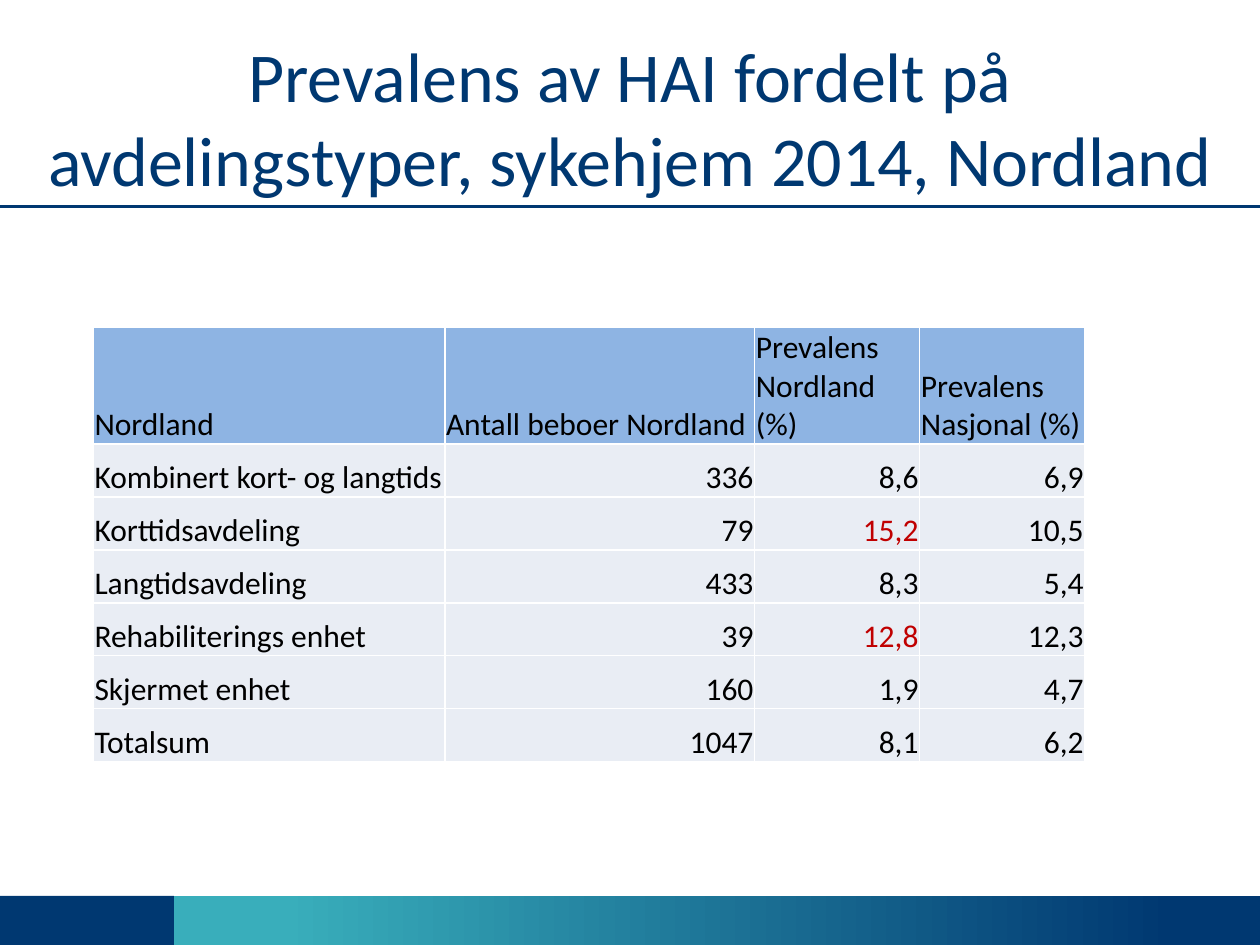
from lxml import etree
from pptx import Presentation
from pptx.dml.color import RGBColor
from pptx.enum import shapes, text
from pptx.oxml import ns
from pptx.util import Inches, Pt

NAVY, TEAL, WHITE, BLACK, RED = "003871", "39AEBB", "FFFFFF", "000000", "C00000"
HEADER_BLUE, ROW_GREY = "8EB4E3", "E9EDF4"


def rgb(hex_color):
    return RGBColor.from_string(hex_color)


def write_text(frame, content, size=18, color=BLACK, align=text.PP_ALIGN.LEFT):
    paragraph = frame.paragraphs[0]
    paragraph.text = content
    paragraph.alignment = align
    paragraph.font.name = "Calibri"
    paragraph.font.size = Pt(size)
    paragraph.font.color.rgb = rgb(color)


presentation = Presentation()
presentation.slide_width = Inches(10)
presentation.slide_height = Inches(7.5)
slide = presentation.slides.add_slide(presentation.slide_layouts[5])

# Footer band: a gradient strip and a solid corner
for left, width in [(1.38, 8.62), (0, 1.38)]:
    band = slide.shapes.add_shape(
        shapes.MSO_SHAPE.RECTANGLE, Inches(left), Inches(7.11), Inches(width), Inches(0.39))
    band.shadow.inherit = False
    band.line.fill.background()
    if left:
        band.fill.gradient()
        band.fill.gradient_angle = 0
        for stop, position, color in zip(band.fill.gradient_stops, (0.1, 0.92), (TEAL, NAVY)):
            stop.position = position
            stop.color.rgb = rgb(color)
    else:
        band.fill.solid()
        band.fill.fore_color.rgb = rgb(NAVY)

# Rule under the title
rule = slide.shapes.add_connector(
    shapes.MSO_CONNECTOR.STRAIGHT, 0, Inches(1.64), Inches(10), Inches(1.64))
rule.line.color.rgb = rgb(NAVY)
rule.line.width = Pt(2)
etree.SubElement(rule._element.spPr, ns.qn("a:effectLst"))

# Title
title = slide.shapes.title
title.left, title.top = Inches(0.26), Inches(0.3)
title.width, title.height = Inches(9.48), Inches(1.25)
title.text_frame.auto_size = text.MSO_AUTO_SIZE.NONE
title.text_frame.vertical_anchor = text.MSO_ANCHOR.MIDDLE
write_text(title.text_frame, "Prevalens av HAI fordelt på avdelingstyper, sykehjem 2014, Nordland",
           size=40, color=NAVY, align=text.PP_ALIGN.CENTER)

# Prevalence table
rows = [
    ("Nordland", "Antall beboer Nordland", "Prevalens Nordland (%)", "Prevalens Nasjonal (%)"),
    ("Kombinert kort- og langtids", "336", "8,6", "6,9"),
    ("Korttidsavdeling", "79", "15,2", "10,5"),
    ("Langtidsavdeling", "433", "8,3", "5,4"),
    ("Rehabiliterings enhet", "39", "12,8", "12,3"),
    ("Skjermet enhet", "160", "1,9", "4,7"),
    ("Totalsum", "1047", "8,1", "6,2"),
]
highlighted = {"15,2", "12,8"}
column_widths = [2.79, 2.46, 1.31, 1.31]
row_height = 0.42

table = slide.shapes.add_table(
    len(rows), len(column_widths), Inches(0.74), Inches(2.6),
    Inches(sum(column_widths)), Inches(row_height * len(rows))).table
table.horz_banding = False
table.first_row = False
for column, width in zip(table.columns, column_widths):
    column.width = Inches(width)

for row_index, values in enumerate(rows):
    table.rows[row_index].height = Inches(row_height)
    for column_index, value in enumerate(values):
        cell = table.cell(row_index, column_index)
        cell.margin_left = cell.margin_right = cell.margin_top = Inches(0.01)
        cell.margin_bottom = 0
        cell.vertical_anchor = text.MSO_ANCHOR.BOTTOM

        # White borders, which must come before the fill
        properties = cell._tc.get_or_add_tcPr()
        for side in ("lnL", "lnR", "lnT", "lnB"):
            border = etree.SubElement(properties, ns.qn(f"a:{side}"), w=str(Pt(1)))
            border_fill = etree.SubElement(border, ns.qn("a:solidFill"))
            etree.SubElement(border_fill, ns.qn("a:srgbClr"), val=WHITE)
        cell.fill.solid()
        cell.fill.fore_color.rgb = rgb(ROW_GREY if row_index else HEADER_BLUE)

        is_number = row_index and column_index
        write_text(cell.text_frame, value,
                   color=RED if value in highlighted else BLACK,
                   align=text.PP_ALIGN.RIGHT if is_number else text.PP_ALIGN.LEFT)

presentation.save("out.pptx")
